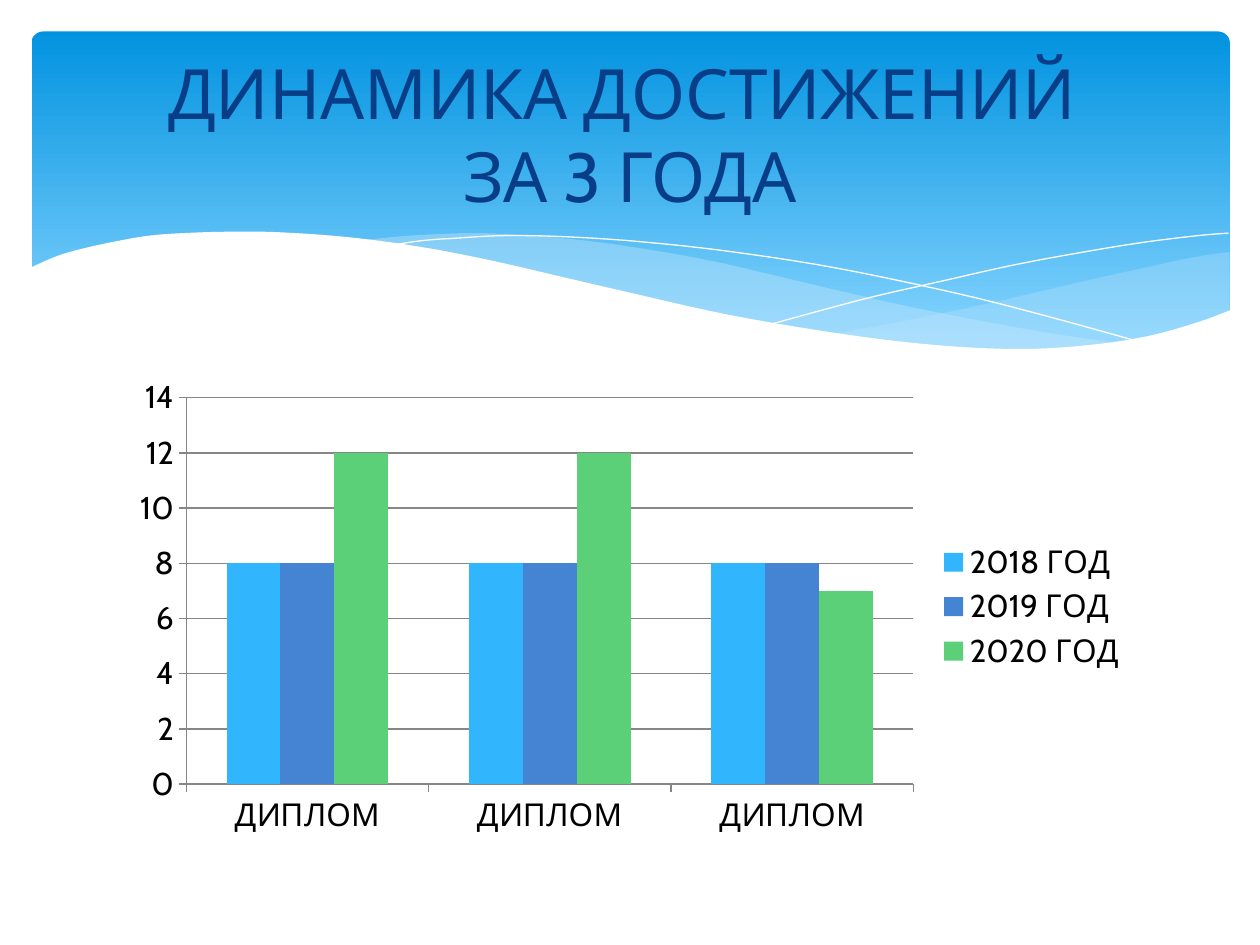
from dataclasses import dataclass

from lxml.etree import SubElement
from pptx import Presentation
from pptx.chart.data import CategoryChartData
from pptx.dml.color import RGBColor
from pptx.enum.chart import XL_CHART_TYPE, XL_LEGEND_POSITION, XL_TICK_MARK
from pptx.enum.shapes import MSO_SHAPE
from pptx.enum.text import MSO_ANCHOR, MSO_AUTO_SIZE, PP_ALIGN
from pptx.oxml.ns import qn
from pptx.util import Inches, Pt


@dataclass(frozen=True)
class Theme:
    font: str = "Cabin"
    title_size: float = 39.6
    chart_size: float = 18
    title: str = "073E87"
    text: str = "000000"
    paper: str = "FFFFFF"
    sky_top: str = "0293E0"
    sky_bottom: str = "83D3FE"
    mist: str = "C6E7FC"
    axis: str = "868686"
    series: tuple = ("31B6FD", "4584D3", "5BD078")


THEME = Theme()

# Each wave is a list of edges; an edge is a smooth curve through its points.
RIGHT_MIST = [
    [(9.76, 2), (9.48, 2.04), (9.06, 2.13), (8.61, 2.23), (7.79, 2.42), (7.06, 2.57), (6.61, 2.65)],
    [(6.61, 2.65), (7.05, 2.71), (7.57, 2.76), (8.03, 2.78), (8.54, 2.76), (8.97, 2.7),
     (9.35, 2.62), (9.76, 2.47)],
]
LEFT_MIST = [
    [(8.93, 2.73), (8.37, 2.65), (7.75, 2.54), (7.06, 2.4), (6.29, 2.22), (5.69, 2.08),
     (5.14, 1.98), (4.65, 1.91), (4.2, 1.87), (3.8, 1.85), (3.44, 1.86), (3.13, 1.88), (2.86, 1.91)],
    [(2.86, 1.91), (3.42, 1.99), (4.04, 2.11), (4.91, 2.32), (5.66, 2.48), (6.34, 2.61),
     (6.95, 2.7), (7.48, 2.76), (7.96, 2.78), (8.38, 2.78), (8.93, 2.73)],
]
FALLING_LINE = [
    [(3.09, 1.95), (3.35, 1.91), (3.63, 1.89), (4.01, 1.87), (4.5, 1.88), (5.1, 1.92),
     (5.82, 2), (6.65, 2.13), (7.6, 2.33), (8.31, 2.51), (9.07, 2.72)],
]
RISING_LINE = [
    [(6.13, 2.57), (6.53, 2.46), (6.95, 2.35), (7.48, 2.23), (8.06, 2.1), (8.66, 1.99),
     (9.1, 1.92), (9.51, 1.87), (9.75, 1.85)],
]
WHITE_WAVE = [
    [(9.77, 2.46), (9.5, 2.56), (9.1, 2.67), (8.63, 2.74), (8.09, 2.77), (7.44, 2.74),
     (6.68, 2.65), (5.79, 2.5), (5.03, 2.33), (4.47, 2.2), (3.91, 2.07), (3.4, 1.97),
     (2.92, 1.9), (2.5, 1.86), (2.11, 1.84), (1.77, 1.84), (1.46, 1.85), (1.19, 1.87),
     (0.95, 1.91), (0.67, 1.97), (0.46, 2.03), (0.23, 2.13)],
    [(0.23, 3.29), (9.77, 3.29)],
]


def rgb(color):
    return RGBColor.from_string(color)


def smooth(points, steps=5):
    """Return points along a Catmull-Rom curve through the given points."""
    padded = [points[0], *points, points[-1]]
    curve = [points[0]]
    for a, b, c, d in zip(padded, padded[1:], padded[2:], padded[3:]):
        for step in range(1, steps + 1):
            t = step / steps
            curve.append(tuple(
                q + t * (r - p) / 2 + t**2 * (2 * p - 5 * q + 4 * r - s) / 2
                + t**3 * (3 * q - p - 3 * r + s) / 2
                for p, q, r, s in zip(a, b, c, d)
            ))
    return curve


def add_wave(slide, edges, closed=True):
    points = [(Inches(x), Inches(y)) for edge in edges for x, y in smooth(edge)]
    builder = slide.shapes.build_freeform(*points[0])
    builder.add_line_segments(points[1:], close=closed)
    wave = builder.convert_to_shape()
    wave.shadow.inherit = False
    return wave


def add_filled_wave(slide, edges, color, opacity=100):
    wave = add_wave(slide, edges)
    wave.line.fill.background()
    wave.fill.solid()
    wave.fill.fore_color.rgb = rgb(color)
    if opacity < 100:
        color_node = next(wave.element.spPr.iter(qn("a:srgbClr")))
        SubElement(color_node, qn("a:alpha"), val=str(opacity * 1000))


def add_hairline(slide, edges):
    hairline = add_wave(slide, edges, closed=False)
    hairline.fill.background()
    hairline.line.color.rgb = rgb(THEME.paper)
    hairline.line.width = Pt(0)


def add_sky(slide):
    sky = slide.shapes.add_shape(
        MSO_SHAPE.ROUNDED_RECTANGLE, Inches(0.25), Inches(0.25), Inches(9.51), Inches(2.7))
    sky.adjustments[0] = 0.034
    sky.shadow.inherit = False
    sky.line.fill.background()
    sky.fill.gradient()
    sky.fill.gradient_angle = 270
    colors = (THEME.sky_top, THEME.sky_bottom)
    for stop, color, position in zip(sky.fill.gradient_stops, colors, (0, 0.9)):
        stop.color.rgb = rgb(color)
        stop.position = position


def set_title(slide, lines):
    title = slide.shapes.title
    title.left, title.top = Inches(0.5), Inches(0.37)
    title.width, title.height = Inches(9), Inches(1.37)
    frame = title.text_frame
    frame.word_wrap = True
    frame.auto_size = MSO_AUTO_SIZE.NONE
    frame.vertical_anchor = MSO_ANCHOR.MIDDLE
    paragraph = frame.paragraphs[0]
    paragraph.alignment = PP_ALIGN.CENTER
    for number, line in enumerate(lines):
        if number:
            paragraph.add_line_break()
        run = paragraph.add_run()
        run.text = line
        run.font.name = THEME.font
        run.font.size = Pt(THEME.title_size)
        run.font.color.rgb = rgb(THEME.title)
    # The title stands in front of the decoration.
    title.element.getparent().append(title.element)


def add_awards_chart(slide, categories, awards_by_year):
    data = CategoryChartData()
    data.categories = categories
    for year, awards in awards_by_year.items():
        data.add_series(year, awards)
    chart = slide.shapes.add_chart(
        XL_CHART_TYPE.COLUMN_CLUSTERED,
        Inches(0.95), Inches(2.93), Inches(8.1), Inches(3.77), data).chart

    chart.has_title = False
    chart.font.name = THEME.font
    chart.font.size = Pt(THEME.chart_size)
    chart.font.color.rgb = rgb(THEME.text)
    chart.has_legend = True
    chart.legend.position = XL_LEGEND_POSITION.RIGHT
    chart.legend.include_in_layout = False

    chart.value_axis.has_major_gridlines = True
    gridlines = chart.value_axis.major_gridlines
    for part in (chart.category_axis, chart.value_axis, gridlines):
        part.format.line.color.rgb = rgb(THEME.axis)
        part.format.line.width = Pt(0.75)
    for axis in (chart.category_axis, chart.value_axis):
        axis.major_tick_mark = XL_TICK_MARK.OUTSIDE

    plot = chart.plots[0]
    plot.gap_width = 150
    plot.vary_by_categories = False
    for series, color in zip(plot.series, THEME.series):
        series.format.fill.solid()
        series.format.fill.fore_color.rgb = rgb(color)


def main():
    presentation = Presentation()
    presentation.slide_width, presentation.slide_height = Inches(10), Inches(7.5)
    slide = presentation.slides.add_slide(presentation.slide_layouts.get_by_name("Title Only"))

    add_sky(slide)
    add_filled_wave(slide, RIGHT_MIST, THEME.mist, opacity=29)
    add_filled_wave(slide, LEFT_MIST, THEME.mist, opacity=40)
    add_hairline(slide, FALLING_LINE)
    add_hairline(slide, RISING_LINE)
    add_filled_wave(slide, WHITE_WAVE, THEME.paper)
    add_awards_chart(slide, ["ДИПЛОМ"] * 3, {
        "2018 ГОД": (8, 8, 8),
        "2019 ГОД": (8, 8, 8),
        "2020 ГОД": (12, 12, 7),
    })
    set_title(slide, ["ДИНАМИКА ДОСТИЖЕНИЙ ", "ЗА 3 ГОДА"])
    presentation.save("out.pptx")


if __name__ == "__main__":
    main()
